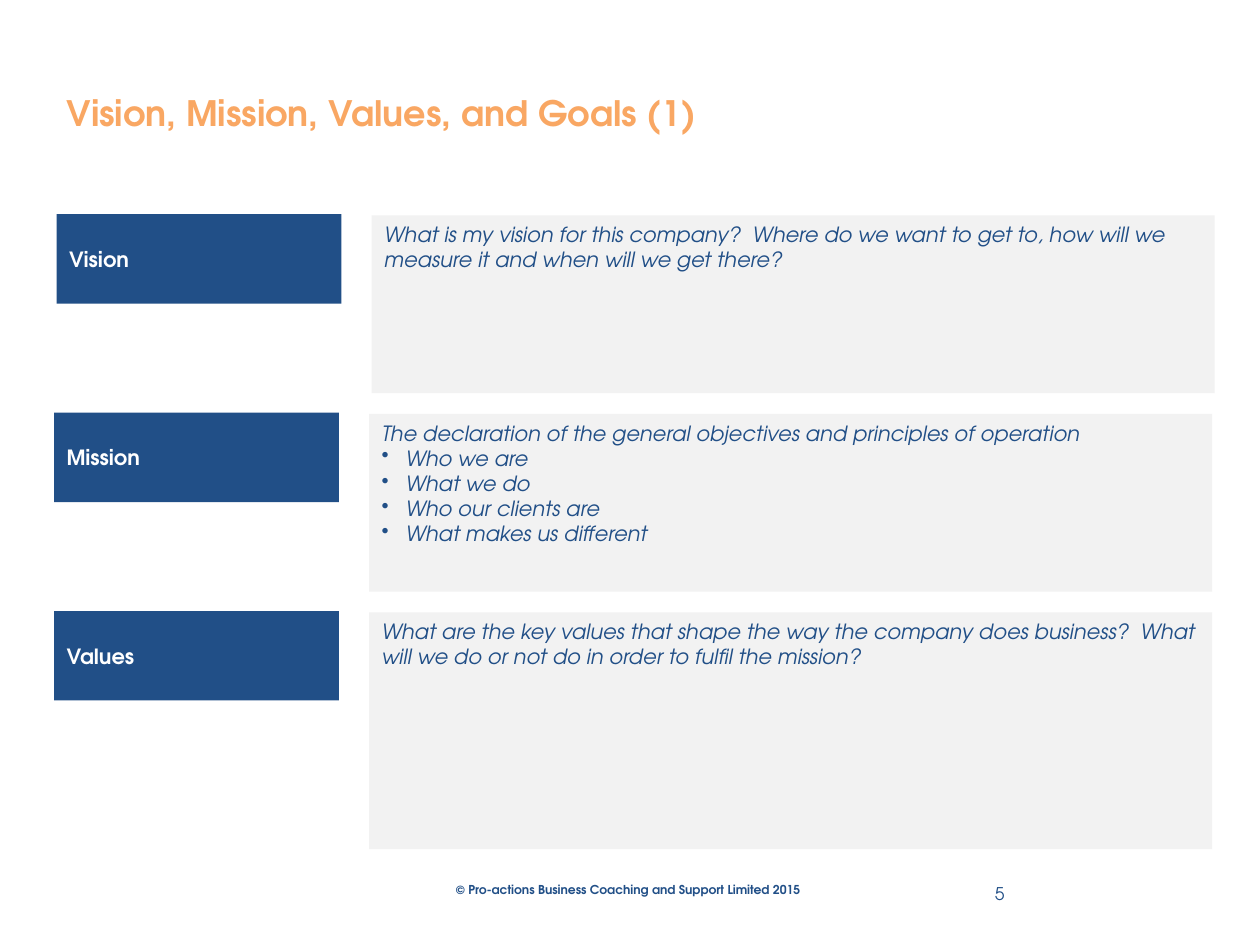
from lxml import etree
from pptx import Presentation
from pptx.dml.color import RGBColor
from pptx.enum import shapes, text
from pptx.oxml.ns import qn
from pptx.util import Inches, Pt

BLUE = RGBColor(0x21, 0x4F, 0x87)
ORANGE = RGBColor(0xF9, 0xA7, 0x63)
GREY = RGBColor(0xF2, 0xF2, 0xF2)
WHITE = RGBColor(0xFF, 0xFF, 0xFF)
FONT = "TeX Gyre Adventor"

FIRST_TOP, ROW_PITCH = 1.7, 1.575
BULLET_INDENT = Inches(0.19)

# Left edge, panel height, heading, prompt, bullet points
SECTIONS = [
    (0.45, 1.41, "Vision",
     "What is my vision for this company?  Where do we want to get to, "
     "how will we measure it and when will we get there?", []),
    (0.43, 1.41, "Mission",
     "The declaration of the general objectives and principles of operation",
     ["Who we are", "What we do", "Who our clients are",
      "What makes us different"]),
    (0.43, 1.88, "Values",
     "What are the key values that shape the way the company does business?  "
     "What will we do or not do in order to fulfil the mission?", []),
]


def style(paragraph, size, color, bold=False, italic=False,
          align=text.PP_ALIGN.LEFT):
    paragraph.alignment = align
    font = paragraph.font
    font.name, font.size = FONT, Pt(size)
    font.bold, font.italic = bold, italic
    font.color.rgb = color


def add_bullet(paragraph):
    properties = paragraph._p.get_or_add_pPr()
    properties.set("marL", str(BULLET_INDENT))
    properties.set("indent", str(-BULLET_INDENT))
    etree.SubElement(properties, qn("a:buChar"), char="•")


def add_label(slide, left, top, width, height, wording, size, color,
              wrap=True, anchor=text.MSO_ANCHOR.TOP, **look):
    label = slide.shapes.add_textbox(
        Inches(left), Inches(top), Inches(width), Inches(height))
    frame = label.text_frame
    frame.word_wrap = wrap
    frame.vertical_anchor = anchor
    frame.text = wording
    style(frame.paragraphs[0], size, color, **look)


def add_block(slide, left, top, width, height, fill, anchor):
    block = slide.shapes.add_shape(
        shapes.MSO_SHAPE.RECTANGLE,
        Inches(left), Inches(top), Inches(width), Inches(height))
    block.shadow.inherit = False
    block.fill.solid()
    block.fill.fore_color.rgb = fill
    block.line.fill.background()
    block.text_frame.word_wrap = True
    block.text_frame.vertical_anchor = anchor
    return block.text_frame


def add_section(slide, left, top, panel_height, heading, prompt, points):
    # Heading block
    frame = add_block(slide, left, top, 2.26, 0.71, BLUE,
                      text.MSO_ANCHOR.MIDDLE)
    frame.text = heading
    style(frame.paragraphs[0], 12, WHITE, bold=True)

    # Answer panel
    frame = add_block(slide, left + 2.5, top + 0.01, 6.69, panel_height, GREY,
                      text.MSO_ANCHOR.TOP)
    frame.text = "\n".join([prompt, *points])
    for index, paragraph in enumerate(frame.paragraphs):
        if index:
            add_bullet(paragraph)
        style(paragraph, 12, BLUE, italic=True)


def main():
    deck = Presentation()
    deck.slide_width, deck.slide_height = Inches(10), Inches(7.5)
    slide = deck.slides.add_slide(deck.slide_layouts[6])

    # Title
    add_label(slide, 0.43, 0.68, 6.14, 0.44,
              "Vision, Mission, Values, and Goals (1)", 20, ORANGE, bold=True)

    # Sections
    for row, (left, *content) in enumerate(SECTIONS):
        add_section(slide, left, FIRST_TOP + row * ROW_PITCH, *content)

    # Footer
    add_label(slide, 3.52, 6.95, 2.99, 0.22,
              "© Pro-actions Business Coaching and Support Limited 2015",
              7, BLUE, wrap=False, bold=True)
    add_label(slide, 7.54, 6.89, 0.53, 0.4, "5", 10, BLUE,
              anchor=text.MSO_ANCHOR.MIDDLE, align=text.PP_ALIGN.RIGHT)

    deck.save("out.pptx")


if __name__ == "__main__":
    main()
